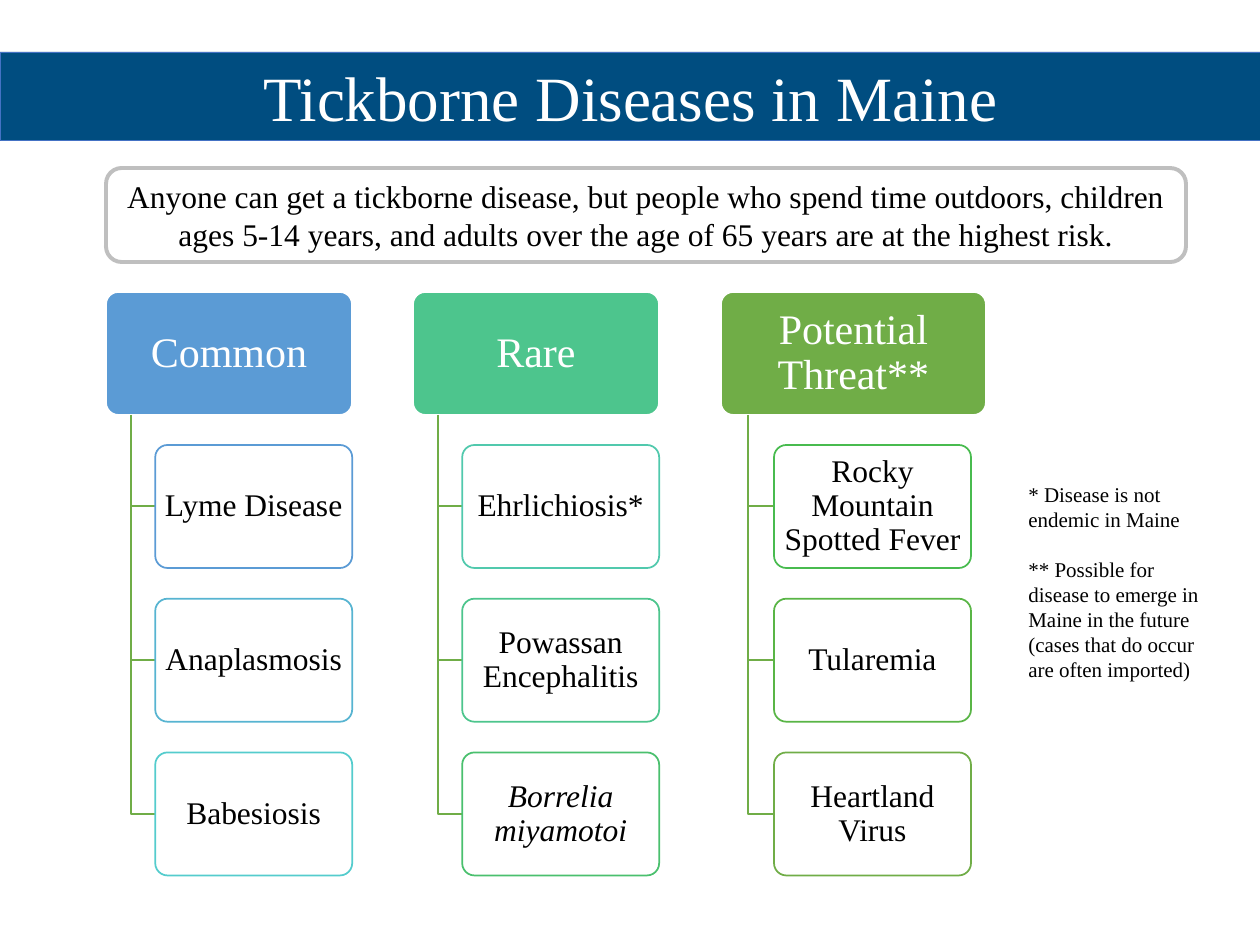
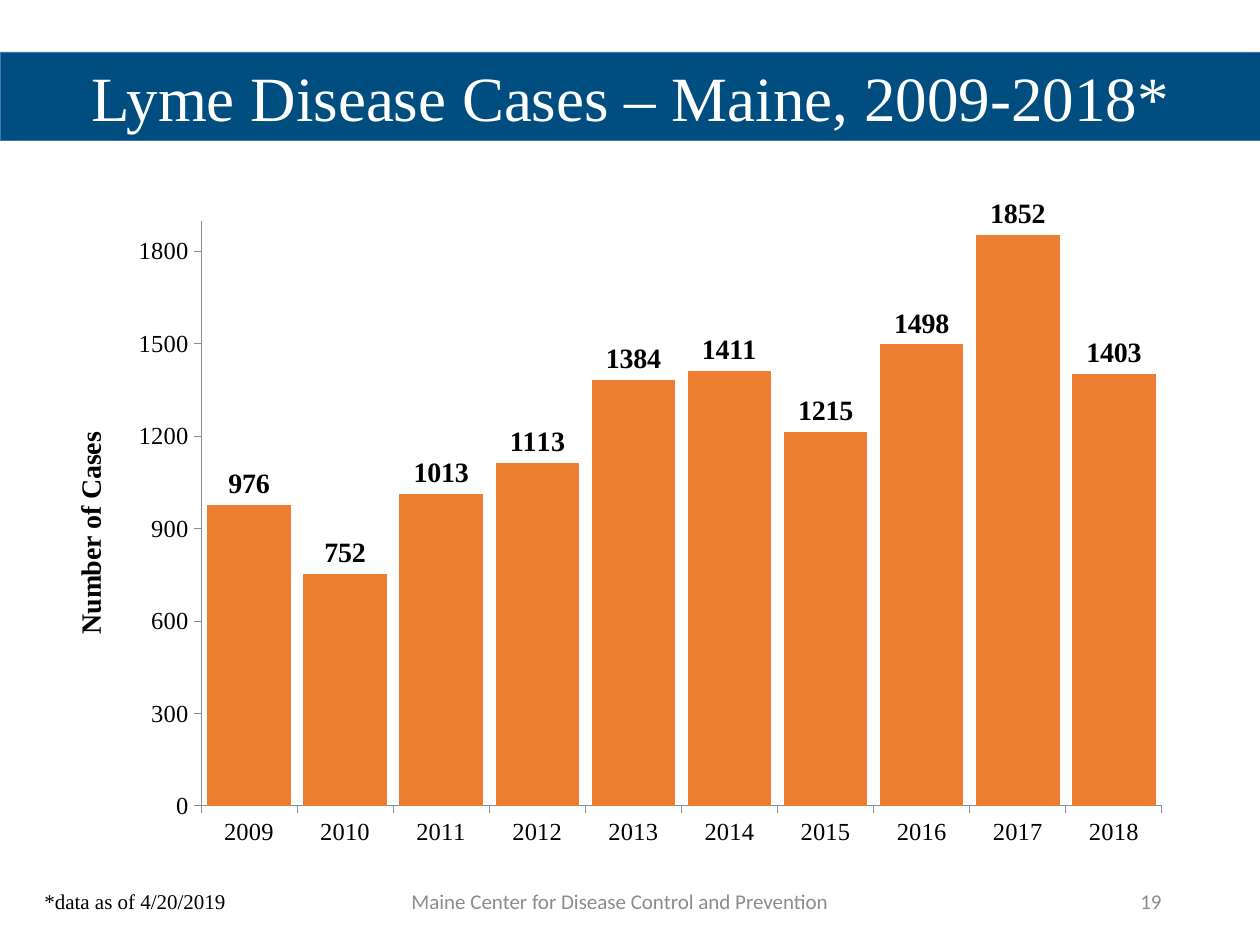
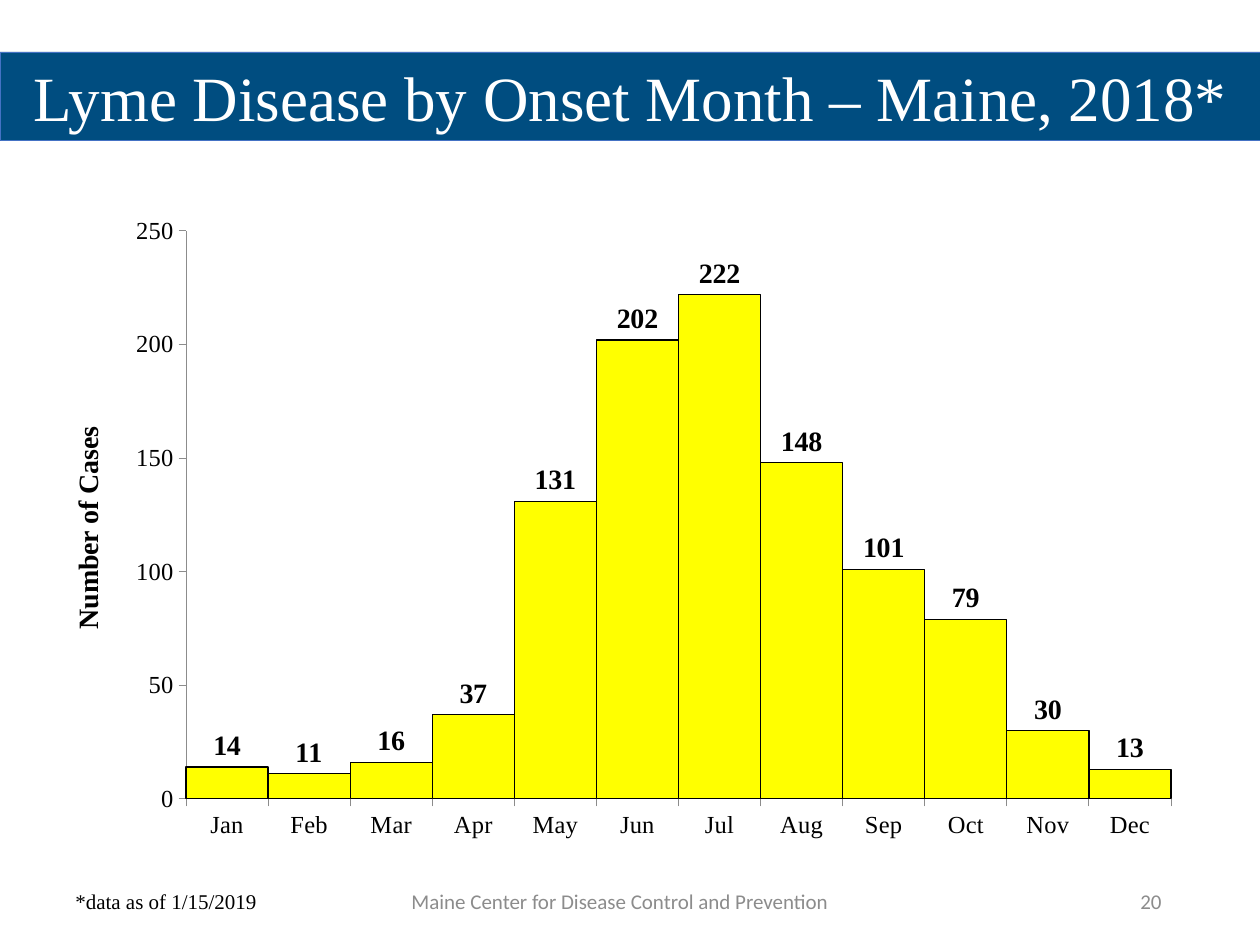
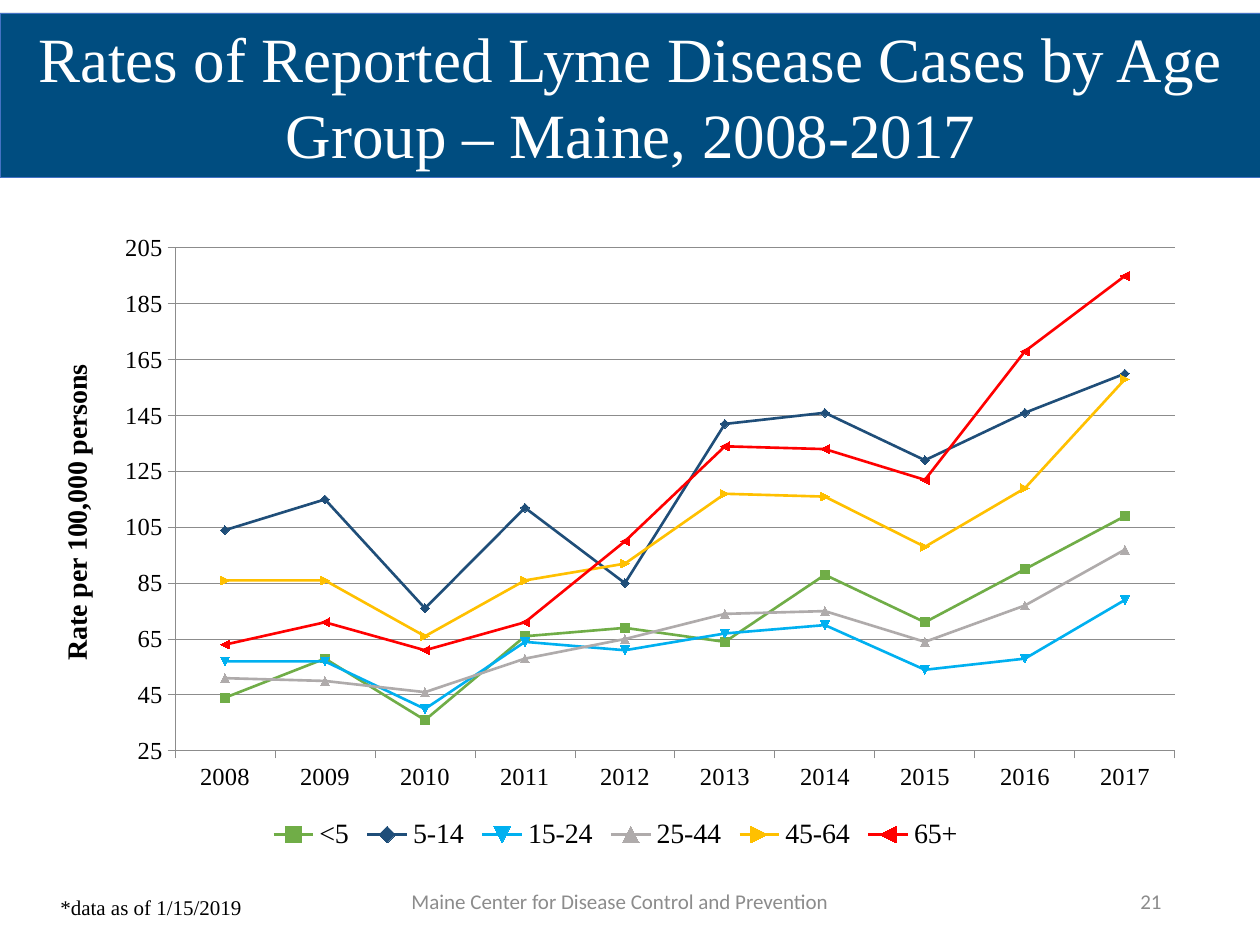
from dataclasses import dataclass

from lxml import etree
from pptx import Presentation
from pptx.chart.data import CategoryChartData
from pptx.dml.color import RGBColor
from pptx.enum.chart import (XL_CHART_TYPE, XL_LABEL_POSITION,
                             XL_LEGEND_POSITION, XL_TICK_MARK)
from pptx.enum.shapes import MSO_SHAPE
from pptx.enum.text import MSO_ANCHOR, MSO_AUTO_SIZE, PP_ALIGN
from pptx.oxml.ns import qn
from pptx.util import Pt

LEFT, CENTER, RIGHT = PP_ALIGN.LEFT, PP_ALIGN.CENTER, PP_ALIGN.RIGHT
TOP, MIDDLE = MSO_ANCHOR.TOP, MSO_ANCHOR.MIDDLE
COLUMNS, LINES = XL_CHART_TYPE.COLUMN_CLUSTERED, XL_CHART_TYPE.LINE_MARKERS
OUTSIDE_END = XL_LABEL_POSITION.OUTSIDE_END
LEGEND_BOTTOM = XL_LEGEND_POSITION.BOTTOM
TICK_OUT, TICK_NONE = XL_TICK_MARK.OUTSIDE, XL_TICK_MARK.NONE
ROUNDED = MSO_SHAPE.ROUNDED_RECTANGLE

PX = 914400 / 126
TITLE_ONLY = 5


@dataclass(frozen=True)
class Theme:
    serif: str = "Times New Roman"
    sans: str = "Calibri"
    band: str = "004D80"
    band_edge: str = "4472C4"
    white: str = "FFFFFF"
    ink: str = "000000"
    grey: str = "8C8C8C"
    frame: str = "BFBFBF"
    stem: str = "70AD47"
    title_size: int = 36
    head_size: int = 24
    body_size: int = 18
    label_size: int = 16
    axis_size: int = 14
    note_size: int = 12


T = Theme()

# Content -------------------------------------------------------------

FOOTER = "Maine Center for Disease Control and Prevention"

RISK = ("Anyone can get a tickborne disease, but people who spend time "
        "outdoors, children ages 5-14 years, and adults over the age of 65 "
        "years are at the highest risk.")
FOOTNOTES = ["* Disease is not endemic in Maine",
             "** Possible for disease to emerge in Maine in the future "
             "(cases that do occur are often imported)"]
ITALIC_NAMES = {"Borrelia miyamotoi"}

# heading, colour, left, width, [(disease, outline colour)]
GROUPS = [
    ("Common", "5B9BD5", 106, 246,
     [("Lyme Disease", "5B9BD5"), ("Anaplasmosis", "57B4D1"),
      ("Babesiosis", "54CCCD")]),
    ("Rare", "4DC58D", 413, 246,
     [("Ehrlichiosis*", "51C9AD"), ("Powassan Encephalitis", "4DC58D"),
      ("Borrelia miyamotoi", "4AC06E")]),
    ("Potential Threat**", "70AD47", 721, 265,
     [("Rocky Mountain Spotted Fever", "48BB4F"), ("Tularemia", "59B546"),
      ("Heartland Virus", "70AD47")]),
]

# Boxes are left, top, width, height; series are name, colour, values.
CHART_SLIDES = [
    dict(title="Lyme Disease Cases – Maine, 2009-2018*", band=(52, 89),
         page="19", note="*data as of 4/20/2019", note_box=(32, 882, 223, 38),
         kind=COLUMNS, box=(45, 199, 1140, 659), plot=(201, 220, 961, 586),
         axis="Number of Cases", scale=(0, 1900, 300), gap=15, outline=None,
         cats=[str(y) for y in range(2009, 2019)],
         series=[("Cases", "ED7D31", [976, 752, 1013, 1113, 1384, 1411, 1215,
                                      1498, 1852, 1403])]),
    dict(title="Lyme Disease by Onset Month – Maine, 2018*", band=(52, 89),
         page="20", note="*data as of 1/15/2019", note_box=(63, 882, 336, 38),
         kind=COLUMNS, box=(43, 204, 1152, 648), plot=(186, 231, 985, 568),
         axis="Number of Cases", scale=(0, 250, 50), gap=0, outline=T.ink,
         cats="Jan Feb Mar Apr May Jun Jul Aug Sep Oct Nov Dec".split(),
         series=[("Cases", "FFFF00", [14, 11, 16, 37, 131, 202, 222, 148, 101,
                                      79, 30, 13])]),
    dict(title="Rates of Reported Lyme Disease Cases by Age Group – "
               "Maine, 2008-2017", band=(13, 165),
         page="21", note="*data as of 1/15/2019", note_box=(48, 888, 336, 38),
         kind=LINES, box=(32, 222, 1167, 634), plot=(175, 248, 1000, 503),
         axis="Rate per 100,000 persons", scale=(25, 205, 20),
         cats=[str(y) for y in range(2008, 2018)],
         series=[
             ("<5", "70AD47", [44, 58, 36, 66, 69, 64, 88, 71, 90, 109]),
             ("5-14", "1F4E79", [104, 115, 76, 112, 85, 142, 146, 129, 146,
                                 160]),
             ("15-24", "00B0F0", [57, 57, 40, 64, 61, 67, 70, 54, 58, 79]),
             ("25-44", "AFABAB", [51, 50, 46, 58, 65, 74, 75, 64, 77, 97]),
             ("45-64", "FFC000", [86, 86, 66, 86, 92, 117, 116, 98, 119,
                                  158]),
             ("65+", "FF0000", [63, 71, 61, 71, 100, 134, 133, 122, 168,
                                195])]),
]


# Helpers -------------------------------------------------------------

def emu(*lengths):
    return [round(n * PX) for n in lengths]


def rgb(value):
    return RGBColor.from_string(value)


def set_font(font, size, color=T.ink, name=T.serif, bold=False, italic=False):
    font.size, font.name = Pt(size), name
    font.bold, font.italic = bold, italic
    font.color.rgb = rgb(color)


def set_line(line, color, width):
    line.color.rgb = rgb(color)
    line.width = Pt(width)


def write(tf, text, align=LEFT, anchor=TOP, spacing=None, gap=0, margins=None,
          **font):
    """Fill a text frame with one string or a list of paragraphs."""
    tf.word_wrap = True
    tf.auto_size = MSO_AUTO_SIZE.NONE
    tf.vertical_anchor = anchor
    if margins:
        tf.margin_left = tf.margin_right = emu(margins[0])[0]
        tf.margin_top = tf.margin_bottom = emu(margins[1])[0]
    for i, part in enumerate([text] if isinstance(text, str) else text):
        p = tf.add_paragraph() if i else tf.paragraphs[0]
        p.alignment, p.line_spacing = align, spacing
        if i:
            p.space_before = Pt(gap)
        r = p.add_run()
        r.text = part
        set_font(r.font, **font)


def add_text(slide, box, text, **fmt):
    write(slide.shapes.add_textbox(*emu(*box)).text_frame, text, **fmt)


def add_box(slide, box, fill, edge, width, corner=None, opacity=None):
    sp = slide.shapes.add_shape(ROUNDED, *emu(*box))
    sp.shadow.inherit = False
    sp.fill.solid()
    sp.fill.fore_color.rgb = rgb(fill)
    set_line(sp.line, edge, width)
    if corner:
        sp.adjustments[0] = corner
    if opacity:
        color = sp._element.spPr.find(qn("a:solidFill"))[0]
        etree.SubElement(color, qn("a:alpha"), val=str(opacity * 1000))
    return sp


def add_elbow(slide, x, top, bottom, right):
    builder = slide.shapes.build_freeform(x, top, scale=PX)
    builder.add_line_segments([(x, bottom), (right, bottom)], close=False)
    sp = builder.convert_to_shape()
    sp.shadow.inherit = False
    sp.fill.background()
    set_line(sp.line, T.stem, 1)


def new_slide(prs, title, band):
    slide = prs.slides.add_slide(prs.slide_layouts[TITLE_ONLY])
    sp = slide.shapes.title
    top, height = band
    sp.left, sp.top, sp.width, sp.height = emu(0, top, 1261, height)
    sp.fill.solid()
    sp.fill.fore_color.rgb = rgb(T.band)
    set_line(sp.line, T.band_edge, 0.5)
    write(sp.text_frame, title, align=CENTER, anchor=MIDDLE,
          size=T.title_size, color=T.white)
    return slide


def place_plot(chart, box, plot):
    """Fix the inner plot area, given in slide px, inside the chart box."""
    area = chart._chartSpace.find(qn("c:chart")).find(qn("c:plotArea"))
    for old in area.findall(qn("c:layout")):
        area.remove(old)
    layout = etree.Element(qn("c:layout"))
    manual = etree.SubElement(layout, qn("c:manualLayout"))
    values = [("layoutTarget", "inner"), ("xMode", "edge"), ("yMode", "edge"),
              ("x", (plot[0] - box[0]) / box[2]),
              ("y", (plot[1] - box[1]) / box[3]),
              ("w", plot[2] / box[2]), ("h", plot[3] / box[3])]
    for tag, value in values:
        etree.SubElement(manual, qn("c:" + tag), val=str(value))
    area.insert(0, layout)


def format_axes(chart, title, scale, grid):
    axis = chart.value_axis
    axis.minimum_scale, axis.maximum_scale, axis.major_unit = scale
    axis.has_major_gridlines = grid
    if grid:
        set_line(axis.major_gridlines.format.line, T.grey, 0.5)
    tf = axis.axis_title.text_frame
    r = tf.paragraphs[0].add_run()
    r.text = title
    set_font(r.font, T.label_size, bold=True)
    tf._txBody.bodyPr.set("rot", "-5400000")
    tf._txBody.bodyPr.set("vert", "horz")
    for ax in (axis, chart.category_axis):
        ax.major_tick_mark, ax.minor_tick_mark = TICK_OUT, TICK_NONE
        set_line(ax.format.line, T.grey, 0.5)
        set_font(ax.tick_labels.font, T.axis_size)


def format_columns(plot, color, gap, outline):
    plot.gap_width = gap
    fmt = plot.series[0].format
    fmt.fill.solid()
    fmt.fill.fore_color.rgb = rgb(color)
    if outline:
        set_line(fmt.line, outline, 0.75)
    plot.has_data_labels = True
    labels = plot.data_labels
    labels.show_value = True
    labels.position = OUTSIDE_END
    set_font(labels.font, T.label_size, bold=True)


def format_lines(chart, colors):
    for series, color in zip(chart.plots[0].series, colors):
        series.smooth = False
        set_line(series.format.line, color, 1.5)
        series.marker.size = 5
        fmt = series.marker.format
        fmt.fill.solid()
        fmt.fill.fore_color.rgb = rgb(color)
        set_line(fmt.line, color, 0.75)
    chart.has_legend = True
    chart.legend.position = LEGEND_BOTTOM
    chart.legend.include_in_layout = False
    set_font(chart.legend.font, T.label_size)


# Slides --------------------------------------------------------------

def build_disease_slide(prs):
    slide = new_slide(prs, "Tickborne Diseases in Maine", (52, 89))
    head_top, first_card, card_w, card_h = 292, 445, 197, 123
    step = card_h * 1.25
    for heading, color, left, width, diseases in GROUPS:
        sp = add_box(slide, (left, head_top, width, card_h), color, T.white, 1,
                     corner=0.1)
        write(sp.text_frame, heading, align=CENTER, anchor=MIDDLE,
              spacing=0.9, margins=(6, 4), size=T.head_size, color=T.white)
        stem_x, card_x = left + width * 0.1, left + width * 0.2
        for i, (disease, edge) in enumerate(diseases):
            top = first_card + i * step
            add_elbow(slide, stem_x, head_top + card_h, top + card_h / 2,
                      card_x)
            sp = add_box(slide, (card_x, top, card_w, card_h), T.white, edge,
                         1, corner=0.1, opacity=90)
            write(sp.text_frame, disease, align=CENTER, anchor=MIDDLE,
                  spacing=0.9, margins=(4, 4), size=T.body_size,
                  italic=disease in ITALIC_NAMES)
    add_text(slide, (1016, 475, 200, 217), FOOTNOTES, gap=14,
             size=T.note_size)
    sp = add_box(slide, (106, 168, 1080, 94), T.white, T.frame, 2.25)
    write(sp.text_frame, RISK, align=CENTER, anchor=MIDDLE, size=T.body_size)


def build_chart_slide(prs, c):
    slide = new_slide(prs, c["title"], c["band"])
    small = dict(anchor=MIDDLE, size=T.note_size, color=T.grey, name=T.sans)
    add_text(slide, (368, 876, 504, 50), FOOTER, align=CENTER, **small)
    add_text(slide, (890, 876, 284, 50), c["page"], align=RIGHT, **small)
    add_text(slide, c["note_box"], c["note"], size=T.note_size)

    data = CategoryChartData()
    data.categories = c["cats"]
    for name, _, values in c["series"]:
        data.add_series(name, values)
    chart = slide.shapes.add_chart(c["kind"], *emu(*c["box"]), data).chart
    chart.has_title = chart.has_legend = False
    set_font(chart.font, T.axis_size)
    chart.plots[0].vary_by_categories = False
    place_plot(chart, c["box"], c["plot"])
    format_axes(chart, c["axis"], c["scale"], grid=c["kind"] == LINES)
    colors = [color for _, color, _ in c["series"]]
    if c["kind"] == LINES:
        format_lines(chart, colors)
    else:
        format_columns(chart.plots[0], colors[0], c["gap"], c["outline"])


def main():
    prs = Presentation()
    prs.slide_width, prs.slide_height = emu(1260, 945)
    build_disease_slide(prs)
    for content in CHART_SLIDES:
        build_chart_slide(prs, content)
    prs.save("out.pptx")


if __name__ == "__main__":
    main()
